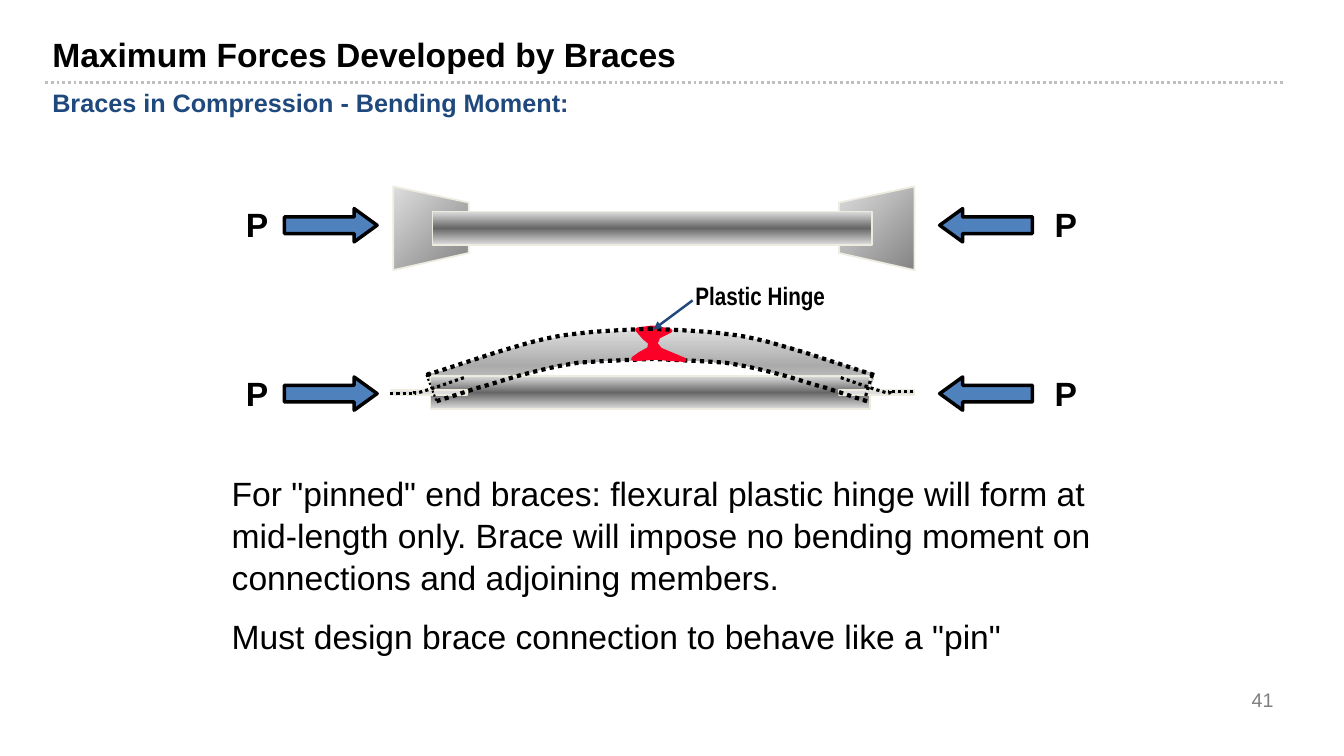
from dataclasses import dataclass

from lxml.etree import SubElement
from pptx import Presentation
from pptx.dml.color import RGBColor
from pptx.enum.dml import MSO_LINE
from pptx.enum.shapes import MSO_CONNECTOR, MSO_SHAPE
from pptx.enum.text import MSO_ANCHOR, MSO_AUTO_SIZE, PP_ALIGN
from pptx.oxml.ns import qn
from pptx.util import Inches, Pt


@dataclass(frozen=True)
class Theme:
    """Colours, fonts and type sizes of the slide."""
    black: str = "000000"
    navy: str = "1F497D"
    blue: str = "4F81BD"
    red: str = "FC0128"
    rule: str = "BFBFBF"
    muted: str = "7F7F7F"
    cream: str = "EEECE1"
    plate: str = "DDDDDD"
    gusset: tuple = ("DDDDDD", "848484")
    tube: tuple = ("DDDDDD", "666666", "DDDDDD")
    bent_tube: tuple = ("DDDDDD", "ABABAB", "DDDDDD")
    font: str = "Arial"
    narrow: str = "Arial Narrow"
    large: int = 24
    medium: int = 18
    small: int = 14


class BraceSlide:
    """Draws styled elements on the current slide."""

    def __init__(self, page, theme):
        self.page = page
        self.theme = theme

    def paint(self, shape, fill=None, line=None, angle=90):
        shape.shadow.inherit = False
        if fill is None:
            shape.fill.background()
        elif isinstance(fill, str):
            shape.fill.solid()
            shape.fill.fore_color.rgb = RGBColor.from_string(fill)
        else:
            shape.fill.gradient()
            shape.fill.gradient_angle = 360 - angle
            stops = shape._element.spPr.find(qn("a:gradFill")).find(qn("a:gsLst"))
            for stop in list(stops):
                stops.remove(stop)
            for index, colour in enumerate(fill):
                position = 100000 * index // (len(fill) - 1)
                stop = SubElement(stops, qn("a:gs"), pos=str(position))
                SubElement(stop, qn("a:srgbClr"), val=colour)
        if line is None:
            shape.line.fill.background()
        else:
            self.stroke(shape.line, *line)

    def stroke(self, line, colour, width, dotted=False):
        line.color.rgb = RGBColor.from_string(colour)
        line.width = Pt(width)
        if dotted:
            line.dash_style = MSO_LINE.ROUND_DOT

    def text(self, place, paragraphs, size, colour=None, bold=True, font=None,
             align=PP_ALIGN.LEFT, anchor=MSO_ANCHOR.TOP, grow=False, spacing=None):
        box = self.page.shapes.add_textbox(*map(Inches, place))
        frame = box.text_frame
        frame.word_wrap = True
        frame.vertical_anchor = anchor
        frame.auto_size = MSO_AUTO_SIZE.SHAPE_TO_FIT_TEXT if grow else MSO_AUTO_SIZE.NONE
        frame.text = "\n".join(paragraphs)
        for index, para in enumerate(frame.paragraphs):
            para.alignment = align
            if spacing:
                para.line_spacing = spacing
            if index:
                para.space_before = Pt(size / 2)
            for span in para.runs:
                span.font.name = font or self.theme.font
                span.font.size = Pt(size)
                span.font.bold = bold
                span.font.color.rgb = RGBColor.from_string(colour or self.theme.black)

    def rectangle(self, place, fill, line):
        shape = self.page.shapes.add_shape(MSO_SHAPE.RECTANGLE, *map(Inches, place))
        self.paint(shape, fill, line)

    def force_arrow(self, left, top, flip):
        place = map(Inches, (left, top, 0.92, 0.33))
        arrow = self.page.shapes.add_shape(MSO_SHAPE.RIGHT_ARROW, *place)
        arrow.adjustments[1] = 0.69
        self.paint(arrow, self.theme.blue, (self.theme.black, 2.5))
        if flip:
            arrow._element.spPr.get_or_add_xfrm().set("flipH", "1")

    def line(self, start, end, colour, width, dotted=False, arrow=False):
        connector = self.page.shapes.add_connector(
            MSO_CONNECTOR.STRAIGHT, *map(Inches, (*start, *end)))
        self.stroke(connector.line, colour, width, dotted)
        properties = connector._element.spPr
        if arrow:
            SubElement(properties.find(qn("a:ln")), qn("a:tailEnd"), type="triangle")
        SubElement(properties, qn("a:effectLst"))

    def outline(self, points, fill=None, line=None, angle=90, close=True):
        start, *rest = [(Inches(x), Inches(y)) for x, y in points]
        builder = self.page.shapes.build_freeform(*start)
        builder.add_line_segments(rest, close=close)
        self.paint(builder.convert_to_shape(), fill, line, angle)

    def dotted_curve(self, points, width):
        self.outline(bezier(points), line=(self.theme.black, width, True), close=False)


def bezier(points, steps=8):
    result = [points[0]]
    for first in range(0, len(points) - 1, 3):
        corners = points[first:first + 4]
        for step in range(1, steps + 1):
            t = step / steps
            weights = ((1 - t) ** 3, 3 * t * (1 - t) ** 2, 3 * t * t * (1 - t), t ** 3)
            result.append(tuple(sum(w * corner[axis] for w, corner in zip(weights, corners))
                                for axis in (0, 1)))
    return result


def mirror(points, width):
    return [(width - x, y) for x, y in points]


BENT_BRACE = [
    (4.25, 3.72), (4.53, 3.64), (4.73, 3.56), (5.05, 3.47), (5.31, 3.39), (5.61, 3.33),
    (5.81, 3.3), (6.09, 3.29), (6.33, 3.27), (6.72, 3.27), (6.89, 3.29), (7.15, 3.3),
    (7.33, 3.34), (7.65, 3.39), (7.89, 3.46), (8.17, 3.56), (8.33, 3.61), (8.52, 3.67),
    (8.68, 3.71), (8.58, 3.98), (8.31, 3.89), (8.02, 3.79), (7.69, 3.7), (7.41, 3.63),
    (7.07, 3.59), (6.76, 3.57), (6.45, 3.56), (6.18, 3.58), (5.99, 3.58), (5.82, 3.6),
    (5.66, 3.61), (5.47, 3.64), (5.11, 3.73), (4.93, 3.79), (4.71, 3.86), (4.53, 3.91),
    (4.34, 3.98)]
GUSSET = [(3.9, 1.85), (4.65, 2.01), (4.65, 2.51), (3.9, 2.68)]
HINGE = [
    (6.65, 3.28), (6.53, 3.34), (6.5, 3.41), (6.55, 3.47), (6.79, 3.57), (6.64, 3.56),
    (6.53, 3.55), (6.47, 3.55), (6.33, 3.56), (6.28, 3.56), (6.35, 3.51), (6.44, 3.46),
    (6.45, 3.4), (6.39, 3.35), (6.32, 3.27), (6.47, 3.25)]
LOWER_EDGE = [
    (4.33, 3.98), (4.4, 3.96), (4.58, 3.9), (4.73, 3.85), (4.89, 3.81), (5.08, 3.74),
    (5.25, 3.7), (5.41, 3.66), (5.53, 3.63), (5.73, 3.6), (5.94, 3.58), (6.32, 3.57),
    (6.47, 3.56)]
UPPER_EDGE = [
    (4.23, 3.72), (4.4, 3.67), (4.57, 3.61), (4.73, 3.56), (4.9, 3.5), (5.08, 3.45),
    (5.25, 3.4), (5.41, 3.36), (5.53, 3.33), (5.73, 3.31), (5.94, 3.28), (6.32, 3.27),
    (6.47, 3.26)]
PLATE_BEND = [(4.11, 3.88), (4.11, 3.9), (4.11, 3.91), (4.2, 3.88), (4.28, 3.86),
              (4.53, 3.77), (4.62, 3.74)]


def main():
    deck = Presentation()
    deck.slide_width, deck.slide_height = Inches(13.33), Inches(7.5)
    theme = Theme()
    slide = BraceSlide(deck.slides.add_slide(deck.slide_layouts[6]), theme)

    slide.line((0.45, 0.82), (12.73, 0.82), theme.rule, 2, dotted=True)
    slide.text((0.42, 0.29, 12.28, 0.44), ["Maximum Forces Developed by Braces"], theme.large)
    slide.text((0.42, 0.82, 12.28, 0.49), ["Braces in Compression - Bending Moment:"],
               theme.medium, theme.navy)
    slide.text((9.62, 6.74, 3.11, 0.4), ["41"], theme.small, theme.muted, bold=False,
               align=PP_ALIGN.RIGHT, anchor=MSO_ANCHOR.MIDDLE)
    slide.text((2.2, 4.62, 8.86, 1.92), [
        'For "pinned" end braces: flexural plastic hinge will form at mid-length only. '
        'Brace will impose no bending moment on connections and adjoining members.',
        'Must design brace connection to behave like a "pin"',
    ], theme.large, bold=False, grow=True, spacing=1.05)

    slide.outline(BENT_BRACE, theme.bent_tube)
    for gusset in (GUSSET, mirror(GUSSET, 12.97)):
        slide.outline(gusset, theme.gusset, (theme.cream, 1.25), angle=45)
    for left, top in ((4.29, 2.1), (4.27, 3.73)):
        slide.rectangle((left, top, 4.36, 0.33), theme.tube, (theme.cream, 1))
    for arrow_top, label_top in ((2.07, 1.97), (3.74, 3.65)):
        for arrow_left, label_left, flip in ((2.82, 2.05, False), (9.32, 10.07, True)):
            slide.force_arrow(arrow_left, arrow_top, flip)
            slide.text((label_left, label_top, 1, 0.5), ["P"], theme.large,
                       align=PP_ALIGN.CENTER, grow=True)

    for left in (8.32, 3.88):
        slide.rectangle((left, 3.87, 0.75, 0.05), theme.plate, (theme.cream, 1.25))
    for start, end, width in (((9.06, 3.88), (8.81, 3.88), 2.25),
                              ((3.87, 3.9), (4.12, 3.9), 2.25),
                              ((4.23, 3.72), (4.33, 3.98), 1.5),
                              ((8.65, 3.72), (8.57, 3.98), 2.25)):
        slide.line(start, end, theme.black, width, dotted=True)
    for bend in (PLATE_BEND, mirror(PLATE_BEND, 12.94)):
        slide.dotted_curve(bend, 2.25)
    slide.outline([(4.25, 3.72), (4.26, 3.71), (4.25, 3.71)], theme.navy, (theme.black, 3))
    for edge in (LOWER_EDGE, mirror(LOWER_EDGE, 12.93)):
        slide.dotted_curve(edge, 3)
    slide.outline(HINGE, theme.red, (theme.red, 3))
    for edge in (UPPER_EDGE, mirror(UPPER_EDGE, 12.9)):
        slide.dotted_curve(edge, 3)
    slide.text((6.45, 2.73, 2.18, 0.4), ["Plastic Hinge"], theme.medium,
               font=theme.narrow, align=PP_ALIGN.CENTER, grow=True)
    slide.line((6.87, 2.98), (6.48, 3.27), theme.navy, 1.75, arrow=True)
    deck.save("out.pptx")


if __name__ == "__main__":
    main()
